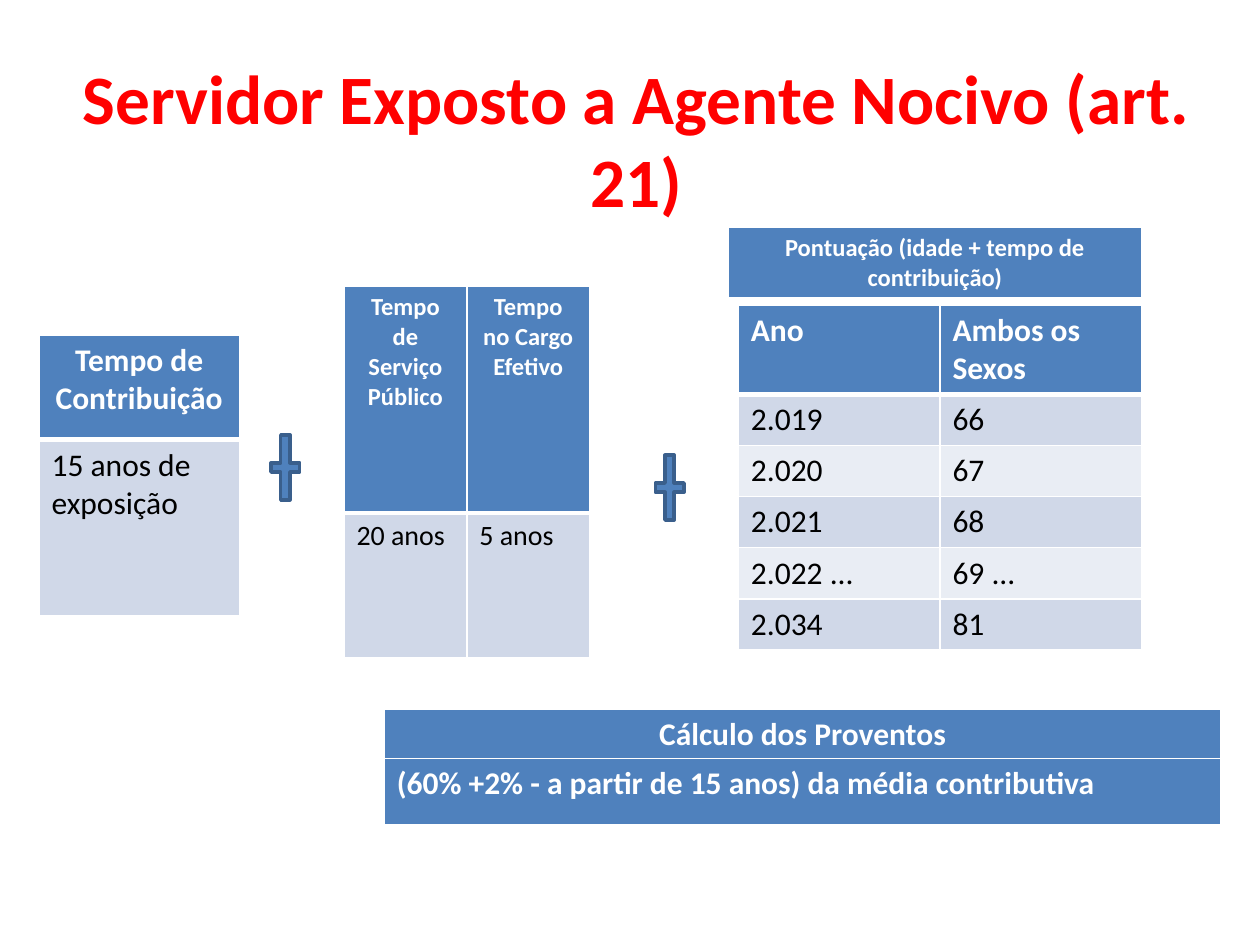
from lxml import etree
from pptx import Presentation
from pptx.dml.color import RGBColor
from pptx.enum import shapes, text
from pptx.oxml import ns
from pptx.util import Inches, Pt

BLUE = RGBColor(0x4F, 0x81, 0xBD)
DARK_BLUE = RGBColor(0x3A, 0x5F, 0x8C)
BAND = RGBColor(0xD0, 0xD8, 0xE8)
LIGHT_BAND = RGBColor(0xE9, 0xED, 0xF4)
RED = RGBColor(0xFF, 0x00, 0x00)
WHITE = RGBColor(0xFF, 0xFF, 0xFF)
BLACK = RGBColor(0x00, 0x00, 0x00)
LEFT, CENTER, JUSTIFY = (text.PP_ALIGN.LEFT, text.PP_ALIGN.CENTER,
                         text.PP_ALIGN.JUSTIFY)


def write(frame, words, size=18, color=BLACK, bold=False, align=LEFT):
    paragraph = frame.paragraphs[0]
    paragraph.alignment = align
    run = paragraph.add_run()
    run.text = words
    run.font.name = "Calibri"
    run.font.size = Pt(size)
    run.font.bold = bold
    run.font.color.rgb = color


def add_grid(rows, left, top, width, heights, head_size=18, body_size=18,
             head_align=CENTER, body_align=LEFT):
    """Table with a blue header row, banded body rows and white borders."""
    columns = len(rows[0])
    table = slide.shapes.add_table(
        len(rows), columns, Inches(left), Inches(top),
        Inches(width), Inches(sum(heights))).table
    for column in table.columns:
        column.width = Inches(width / columns)
    for r, (row, height) in enumerate(zip(rows, heights)):
        table.rows[r].height = Inches(height)
        head = r == 0
        for c, words in enumerate(row):
            cell = table.cell(r, c)
            if head:
                write(cell.text_frame, words, size=head_size, color=WHITE,
                      bold=True, align=head_align)
            else:
                write(cell.text_frame, words, size=body_size, align=body_align)
            # Borders come before the fill in the cell properties
            properties = cell._tc.get_or_add_tcPr()
            for side in "LRTB":
                thick = (head and side == "B") or (r == 1 and side == "T")
                border = etree.SubElement(properties, ns.qn(f"a:ln{side}"),
                                          w=str(Pt(3 if thick else 1)))
                solid = etree.SubElement(border, ns.qn("a:solidFill"))
                etree.SubElement(solid, ns.qn("a:srgbClr"), val=str(WHITE))
            cell.fill.solid()
            cell.fill.fore_color.rgb = (
                BLUE if head else BAND if r % 2 else LIGHT_BAND)


presentation = Presentation()
presentation.slide_width = Inches(10)
presentation.slide_height = Inches(7.5)
slide = presentation.slides.add_slide(presentation.slide_layouts[5])

# Title
title = slide.shapes.title
title.left, title.top = Inches(0.55), Inches(0.47)
title.width, title.height = Inches(9), Inches(1.25)
title.text_frame.vertical_anchor = text.MSO_ANCHOR.MIDDLE
write(title.text_frame, "Servidor Exposto a Agente Nocivo (art. 21)",
      size=39.6, color=RED, bold=True, align=CENTER)

# Contribution time
add_grid([["Tempo de Contribuição"], ["15 anos de exposição"]],
         0.31, 2.66, 1.59, [0.83, 1.4])

# Public service and post time
add_grid([["Tempo de Serviço Público", "Tempo no Cargo Efetivo"],
          ["20 anos", "5 anos"]],
         2.73, 2.27, 1.95, [1.8, 1.15],
         head_size=14, body_size=16, body_align=JUSTIFY)

# Points by year
add_grid([["Pontuação (idade + tempo de contribuição)"]],
         5.78, 1.8, 3.28, [0.57], head_size=14)
add_grid([["Ano", "Ambos os Sexos"],
          ["2.019", "66"],
          ["2.020", "67"],
          ["2.021", "68"],
          ["2.022 ...", "69 ..."],
          ["2.034", "81"]],
         5.86, 2.42, 3.2, [0.7] + [0.4] * 5, head_align=LEFT)

# Benefit calculation
add_grid([["Cálculo dos Proventos"]], 3.05, 5.63, 6.64, [0.41])
add_grid([["(60% +2% - a partir de 15 anos) da média contributiva"]],
         3.05, 6.02, 6.64, [0.54], head_align=LEFT)

# Plus signs between the requirements
for left, top in [(2.11, 3.36), (5.16, 3.52)]:
    plus = slide.shapes.add_shape(shapes.MSO_SHAPE.MATH_PLUS, Inches(left),
                                  Inches(top), Inches(0.31), Inches(0.7))
    plus.shadow.inherit = False
    plus.fill.solid()
    plus.fill.fore_color.rgb = BLUE
    plus.line.color.rgb = DARK_BLUE
    plus.line.width = Pt(2)

presentation.save("out.pptx")
